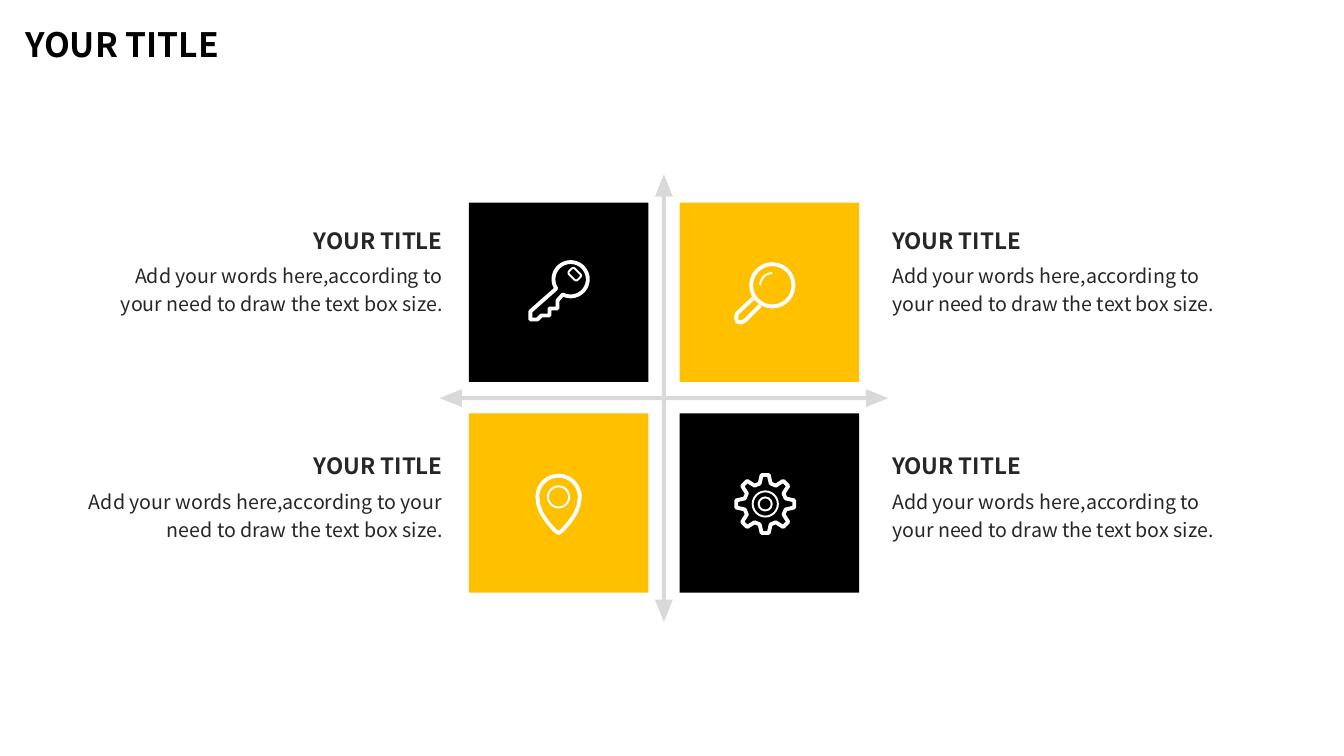
from dataclasses import dataclass
from math import cos, radians, sin
from typing import Callable

from pptx import Presentation
from pptx.dml.color import RGBColor
from pptx.enum.shapes import MSO_SHAPE
from pptx.enum.text import MSO_ANCHOR, MSO_AUTO_SIZE, PP_ALIGN
from pptx.util import Inches, Pt

RECTANGLE, ROUNDED = MSO_SHAPE.RECTANGLE, MSO_SHAPE.ROUNDED_RECTANGLE
OVAL, QUAD_ARROW = MSO_SHAPE.OVAL, MSO_SHAPE.QUAD_ARROW
LEFT, RIGHT = PP_ALIGN.LEFT, PP_ALIGN.RIGHT
TOP, NO_AUTOFIT = MSO_ANCHOR.TOP, MSO_AUTO_SIZE.NONE
TITLE_ONLY = 5


@dataclass(frozen=True)
class Theme:
    font: str = "Noto Sans CJK JP"
    black: str = "000000"
    amber: str = "FFC000"
    white: str = "FFFFFF"
    grey: str = "D9D9D9"
    ink: str = "262626"
    title_size: int = 24
    heading_size: int = 16
    body_size: int = 14
    bold_line: float = 2.75
    thin_line: float = 1.4


THEME = Theme()
HEADING = "YOUR TITLE"
DESCRIPTION = "Add your words here,according to your need to draw the text box size."


@dataclass(frozen=True)
class Quadrant:
    column: int
    row: int
    color: str
    text_width: float
    icon: Callable


# ---- Basic parts ----
def write_text(box, text, *, size, color=THEME.ink, bold=False, align=LEFT,
               wrap=True, line_spacing=None, space_before=None):
    frame = box.text_frame
    frame.word_wrap = wrap
    frame.auto_size = NO_AUTOFIT
    frame.vertical_anchor = TOP
    para = frame.paragraphs[0]
    para.alignment = align
    para.line_spacing = line_spacing
    para.space_before = space_before
    span = para.add_run()
    span.text = text
    span.font.name = THEME.font
    span.font.size = Pt(size)
    span.font.bold = bold
    span.font.color.rgb = RGBColor.from_string(color)


def add_text(page, left, top, width, height, text, **style):
    box = page.shapes.add_textbox(Inches(left), Inches(top), Inches(width), Inches(height))
    write_text(box, text, **style)


def add_filled(page, kind, left, top, width, height, color):
    shape = page.shapes.add_shape(kind, Inches(left), Inches(top), Inches(width), Inches(height))
    shape.shadow.inherit = False
    shape.fill.solid()
    shape.fill.fore_color.rgb = RGBColor.from_string(color)
    shape.line.fill.background()
    return shape


# ---- Icon strokes, placed from the icon's centre ----
def style_stroke(shape, weight):
    shape.shadow.inherit = False
    shape.fill.background()
    shape.line.color.rgb = RGBColor.from_string(THEME.white)
    shape.line.width = Pt(weight)


def arc(x, y, radius, start, end, step=6):
    turn = step if end > start else -step
    return [(x + radius * cos(radians(angle)), y + radius * sin(radians(angle)))
            for angle in range(start, end + turn, turn)]


def stroke_path(icon, center, points, weight=THEME.bold_line, close=False):
    placed = [(Inches(center[0] + x), Inches(center[1] + y)) for x, y in points]
    builder = icon.shapes.build_freeform(*placed[0])
    builder.add_line_segments(placed[1:], close=close)
    style_stroke(builder.convert_to_shape(), weight)


def stroke_shape(icon, center, kind, x, y, width, height, weight=THEME.thin_line):
    shape = icon.shapes.add_shape(kind, Inches(center[0] + x - width / 2),
                                  Inches(center[1] + y - height / 2),
                                  Inches(width), Inches(height))
    style_stroke(shape, weight)
    return shape


# ---- Icons ----
def draw_key(icon, center):
    teeth = [(-0.28, 0.19), (-0.28, 0.27), (-0.21, 0.27), (-0.17, 0.23), (-0.09, 0.23),
             (-0.09, 0.16), (-0.01, 0.16), (-0.01, 0.08)]
    stroke_path(icon, center, teeth + arc(0.12, -0.13, 0.17, 117, -210), close=True)
    slot = stroke_shape(icon, center, ROUNDED, 0.16, -0.18, 0.12, 0.08)
    slot.adjustments[0] = 0.25
    slot.rotation = 45


def draw_magnifier(icon, center):
    lens_x, lens_y = 0.07, -0.07
    stroke_shape(icon, center, OVAL, lens_x, lens_y, 0.42, 0.42, THEME.bold_line)
    stroke_path(icon, center, arc(lens_x, lens_y, 0.12, 180, 270), THEME.thin_line)
    stroke_path(icon, center, [(-0.12, 0.06), (-0.28, 0.21), (-0.29, 0.25), (-0.28, 0.29),
                               (-0.24, 0.3), (-0.2, 0.28), (-0.05, 0.13)])


def draw_pin(icon, center):
    side = [(0.2, 0.02), (0.17, 0.1), (0.11, 0.19), (0.04, 0.27)]
    mirrored = [(-x, y) for x, y in reversed(side)]
    stroke_path(icon, center, arc(0, -0.06, 0.21, 180, 360) + side + [(0, 0.3)] + mirrored,
                close=True)
    stroke_shape(icon, center, OVAL, 0, -0.06, 0.21, 0.21)


def draw_gear(icon, center):
    tooth = [(-15, 0.21), (-7, 0.29), (7, 0.29), (15, 0.21)]
    hub_y = 0.01
    outline = [(radius * cos(radians(turn + angle)), hub_y + radius * sin(radians(turn + angle)))
               for turn in range(0, 360, 45) for angle, radius in tooth]
    stroke_path(icon, center, outline, close=True)
    for diameter in (0.25, 0.13):
        stroke_shape(icon, center, OVAL, 0, hub_y, diameter, diameter)


QUADRANTS = (
    Quadrant(0, 0, THEME.black, 3.69, draw_key),
    Quadrant(1, 0, THEME.amber, 3.6, draw_magnifier),
    Quadrant(0, 1, THEME.amber, 3.79, draw_pin),
    Quadrant(1, 1, THEME.black, 3.6, draw_gear),
)


# ---- Regions ----
def add_title(page, left, top, width, height):
    title = page.shapes.title
    title.left, title.top = Inches(left), Inches(top)
    title.width, title.height = Inches(width), Inches(height)
    write_text(title, HEADING, size=THEME.title_size, color=THEME.black, bold=True)


def add_tile(page, left, top, side, quadrant):
    add_filled(page, RECTANGLE, left, top, side, side, quadrant.color)
    icon_shift = -0.04 * quadrant.column
    center = (left + side / 2 + icon_shift, top + side / 2)
    quadrant.icon(page.shapes.add_group_shape(), center)


def add_caption(page, edge, top, width, align):
    """Place a heading and its description against the inner edge."""
    heading_width = 1.51
    direction = 1 if align == RIGHT else 0
    add_text(page, edge - direction * width, top + 0.32, width, 0.66, DESCRIPTION,
             size=THEME.body_size, align=align, line_spacing=1.2,
             space_before=Pt(0.2 * THEME.body_size))
    add_text(page, edge - direction * heading_width, top, heading_width, 0.37, HEADING,
             size=THEME.heading_size, bold=True, align=align, wrap=False)


def add_matrix(page, left, top, width, height):
    arrows = add_filled(page, QUAD_ARROW, left, top, width, height, THEME.grey)
    for index, value in enumerate((0.009, 0.02, 0.05)):
        arrows.adjustments[index] = value
    side, pitch = 1.78, 2.09
    caption_edges = ((left + 0.13, RIGHT), (left + width - 0.06, LEFT))
    for quadrant in QUADRANTS:
        add_tile(page, left + 0.29 + quadrant.column * pitch,
                 top + 0.28 + quadrant.row * pitch, side, quadrant)
        edge, align = caption_edges[quadrant.column]
        add_caption(page, edge, top + 0.47 + quadrant.row * 2.24, quadrant.text_width, align)


def main():
    deck = Presentation()
    deck.slide_width, deck.slide_height = Inches(13.33), Inches(7.5)
    page = deck.slides.add_slide(deck.slide_layouts[TITLE_ONLY])
    add_title(page, 0.15, 0.19, 2.35, 0.5)
    add_matrix(page, 4.36, 1.73, 4.45, 4.44)
    deck.save("out.pptx")


if __name__ == "__main__":
    main()
